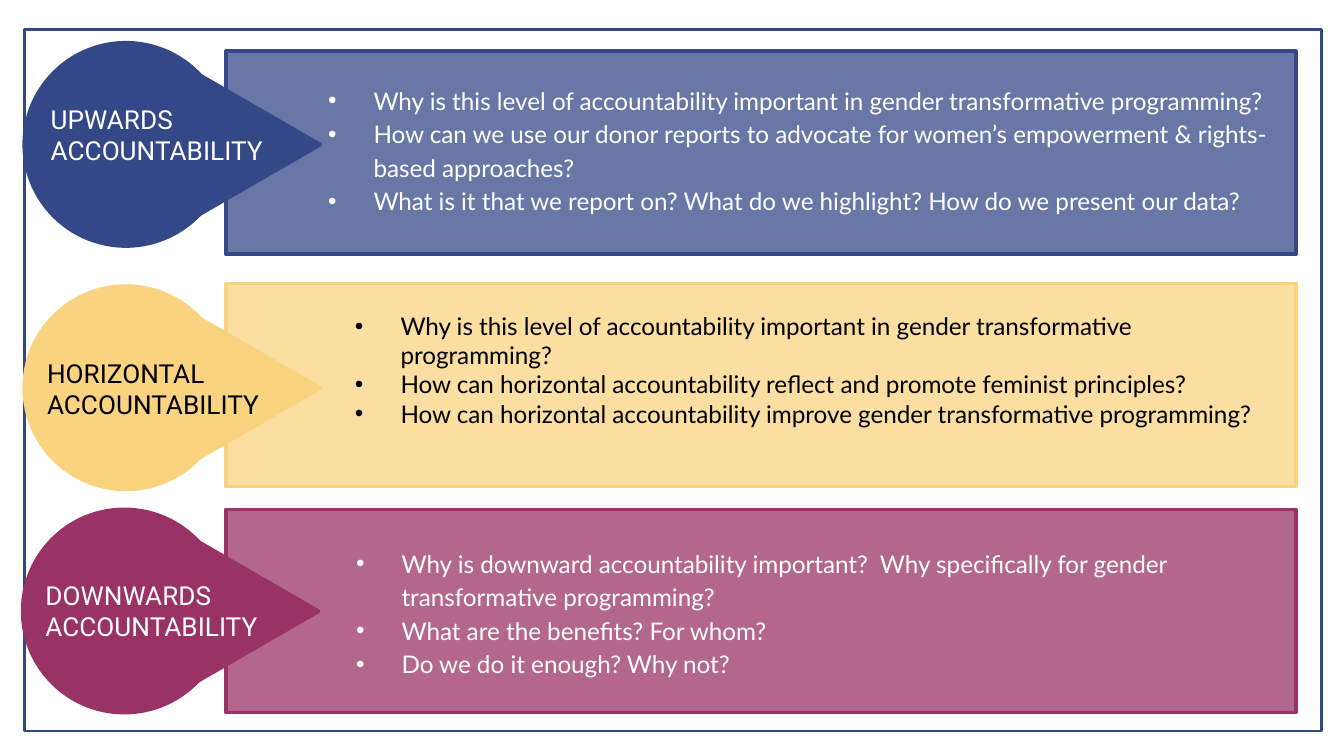
"""Build a slide of discussion questions for three levels of accountability."""
import pptx
import pptx.dml.color
import pptx.enum.shapes
import pptx.oxml
import pptx.oxml.ns
import pptx.util

Cm = pptx.util.Cm
Pt = pptx.util.Pt
SHAPES = pptx.enum.shapes.MSO_SHAPE
COLORS = {"blue": "344888", "yellow": "F9D380", "plum": "993365",
          "white": "FFFFFF", "black": "000000"}

LEVELS = [
    {"label": ["UPWARDS", "ACCOUNTABILITY"], "color": "blue", "ink": "white",
     "opacity": 74, "panel_top": 0.97, "circle": (0.46, 0.81),
     "label_at": (0.71, 1.83), "list_at": (5.54, 1.42, 19.41, 2.74), "spacing": 1.15,
     "questions": [
         "Why is this level of accountability important in gender transformative programming?",
         "How can we use our donor reports to advocate for women’s empowerment & rights-based approaches?",
         "What is it that we report on? What do we highlight? How do we present our data?"]},
    {"label": ["HORIZONTAL", "ACCOUNTABILITY"], "color": "yellow", "ink": "black",
     "opacity": 73, "panel_top": 5.36, "circle": (0.46, 5.41),
     "label_at": (0.64, 6.63), "list_at": (6.05, 5.76, 17.93, 2.46), "spacing": 1.0,
     "questions": [
         "Why is this level of accountability important in gender transformative programming?",
         "How can horizontal accountability reflect and promote feminist principles?",
         "How can horizontal accountability improve gender transformative programming?"]},
    {"label": ["DOWNWARDS", "ACCOUNTABILITY"], "color": "plum", "ink": "white",
     "opacity": 74, "panel_top": 9.63, "circle": (0.43, 9.63),
     "label_at": (0.61, 10.82), "list_at": (6.07, 10.17, 17.93, 2.74), "spacing": 1.15,
     "questions": [
         "Why is downward accountability important?  Why specifically for gender transformative programming?",
         "What are the benefits? For whom?",
         "Do we do it enough? Why not?"]},
]
PANEL_LEFT, PANEL_WIDTH, BAND_HEIGHT = 4.27, 20.22, 3.84
POINTER_OFFSET, POINTER_SIZE = (2.82, 0.64), (2.97, 2.57)
LABEL_SIZE = (6.48, 1.45)


def rgb(name):
    return pptx.dml.color.RGBColor.from_string(COLORS[name])


def element(parent, tag, **attributes):
    child = pptx.oxml.parse_xml(f"<{tag} {pptx.oxml.ns.nsdecls('a')}/>")
    for name, value in attributes.items():
        child.set(name, value)
    parent.append(child)
    return child


def add_outlined(owner, kind, place, color, width=2, filled=True):
    shape = owner.shapes.add_shape(kind, *map(Cm, place))
    shape.shadow.inherit = False
    if filled:
        shape.fill.solid()
        shape.fill.fore_color.rgb = rgb(color)
    else:
        shape.fill.background()
    shape.line.color.rgb = rgb(color)
    shape.line.width = Pt(width)
    element(shape.line._ln, "a:round")
    return shape


def add_text_box(owner, place):
    box = owner.shapes.add_textbox(*map(Cm, place))
    box.text_frame.word_wrap = True
    return box.text_frame


def add_span(para, text, font, size, color):
    span = para.add_run()
    span.text = text
    span.font.name = font
    span.font.size = Pt(size)
    span.font.color.rgb = rgb(color)


def add_label(owner, level):
    para = add_text_box(owner, level["label_at"] + LABEL_SIZE).paragraphs[0]
    for index, line in enumerate(level["label"]):
        if index:
            para.add_line_break()
        add_span(para, line, "Roboto", 14, level["ink"])


def add_questions(owner, level):
    frame = add_text_box(owner, level["list_at"])
    for index, question in enumerate(level["questions"]):
        para = frame.add_paragraph() if index else frame.paragraphs[0]
        para.line_spacing = level["spacing"]
        properties = para._p.get_or_add_pPr()
        properties.set("marL", str(Cm(1.27)))
        properties.set("indent", str(-Cm(0.86)))
        bullet_color = element(properties, "a:buClr")
        element(bullet_color, "a:srgbClr", val=COLORS[level["ink"]])
        element(properties, "a:buFont", typeface="Arial")
        element(properties, "a:buChar", char="•")
        add_span(para, question, "Lato", 13, level["ink"])


def add_level(page, level):
    group = page.shapes.add_group_shape()
    color = level["color"]
    left, top = level["circle"]
    panel = add_outlined(group, SHAPES.RECTANGLE,
                         (PANEL_LEFT, level["panel_top"], PANEL_WIDTH, BAND_HEIGHT), color)
    fill_color = panel._element.spPr.find(pptx.oxml.ns.qn("a:solidFill"))[0]
    element(fill_color, "a:alpha", val=str(level["opacity"] * 1000))
    add_outlined(group, SHAPES.OVAL, (left, top, BAND_HEIGHT, BAND_HEIGHT), color)
    pointer = add_outlined(group, SHAPES.ISOSCELES_TRIANGLE,
                           (left + POINTER_OFFSET[0], top + POINTER_OFFSET[1]) + POINTER_SIZE, color)
    pointer.rotation = 90
    add_questions(group, level)
    add_label(group, level)


def main():
    deck = pptx.Presentation()
    deck.slide_width, deck.slide_height = Cm(25.4), Cm(14.29)
    page = deck.slides.add_slide(deck.slide_layouts[6])
    add_outlined(page, SHAPES.RECTANGLE, (0.46, 0.56, 24.51, 13.26), "blue", 1.5, filled=False)
    for level in LEVELS:
        add_level(page, level)
    deck.save("out.pptx")


if __name__ == "__main__":
    main()
